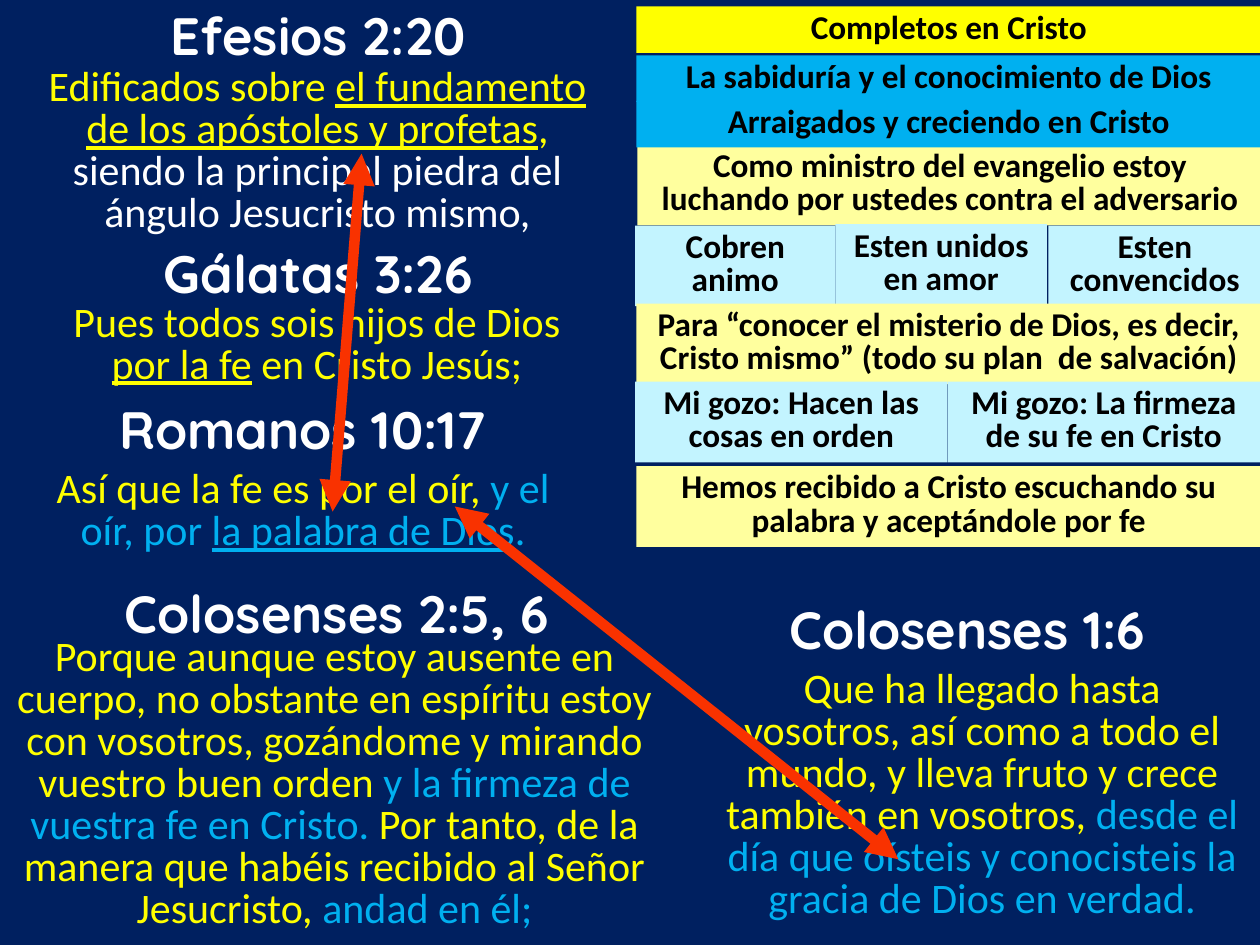
from lxml import etree
from pptx import Presentation
from pptx.dml.color import RGBColor
from pptx.enum.shapes import MSO_CONNECTOR, MSO_SHAPE
from pptx.enum.text import MSO_ANCHOR, MSO_AUTO_SIZE, PP_ALIGN
from pptx.oxml.ns import qn
from pptx.util import Inches, Pt

NAVY = RGBColor(0x00, 0x20, 0x60)
WHITE = RGBColor(0xFF, 0xFF, 0xFF)
BLACK = RGBColor(0x00, 0x00, 0x00)
YELLOW = RGBColor(0xFF, 0xFF, 0x00)
CREAM = RGBColor(0xFF, 0xFF, 0x9E)
BLUE = RGBColor(0x00, 0xB0, 0xF0)
ICE = RGBColor(0xC3, 0xF4, 0xFF)
RED = RGBColor(0xF9, 0x32, 0x00)

BANNERS = [
    ("Completos en Cristo", 5.05, 0.05, 4.96, 0.37, YELLOW),
    ("La sabiduría y el conocimiento de Dios", 5.05, 0.44, 4.96, 0.37, BLUE),
    ("Como ministro del evangelio estoy luchando por ustedes contra el adversario",
     5.06, 1.15, 4.96, 0.64, CREAM),
    ("Cobren animo", 5.04, 1.79, 1.59, 0.64, ICE),
    ("Esten unidos en amor", 6.63, 1.78, 1.68, 0.64, ICE),
    ("Esten convencidos", 8.32, 1.79, 1.69, 0.64, ICE),
    ("Para “conocer el misterio de Dios, es decir, Cristo mismo” (todo su plan  de salvación)",
     5.05, 2.41, 4.96, 0.64, CREAM),
    ("Mi gozo: Hacen las cosas en orden", 5.04, 3.03, 2.48, 0.64, ICE),
    ("Mi gozo: La firmeza de su fe en Cristo", 7.52, 3.03, 2.48, 0.64, ICE),
    ("Arraigados y creciendo en Cristo", 5.05, 0.8, 4.96, 0.37, BLUE),
    ("Hemos recibido a Cristo escuchando su palabra y aceptándole por fe",
     5.05, 3.7, 4.96, 0.64, CREAM),
]

REFERENCES = [
    ("Gálatas 3:26", 0.2, 1.86, 4.65),
    ("Romanos 10:17", 0.08, 3.1, 4.65),
    ("Colosenses 2:5, 6", 0.35, 4.56, 4.65),
    ("Colosenses 1:6", 5.79, 4.69, 3.78),
]

VERSES = [
    ((0.12, 0.49, 4.8, 1.45), [
        ("Edificados sobre ", YELLOW, False),
        ("el fundamento de los apóstoles y profetas", YELLOW, True),
        (", ", YELLOW, False),
        ("siendo la principal piedra del ángulo Jesucristo mismo,", WHITE, False)]),
    ((0.31, 2.36, 4.41, 0.78), [
        ("Pues todos sois hijos de Dios ", YELLOW, False),
        ("por la fe", YELLOW, True),
        (" en Cristo Jesús;", YELLOW, False)]),
    ((0.2, 3.68, 4.41, 0.78), [
        ("Así que la fe es por el oír, ", YELLOW, False),
        ("y el oír, por ", BLUE, False),
        ("la palabra de Dios", BLUE, True),
        (".", BLUE, False)]),
    ((0, 5.01, 5.31, 2.46), [
        ("Porque aunque estoy ausente en cuerpo, no obstante en espíritu estoy con "
         "vosotros, gozándome y mirando vuestro buen orden ", YELLOW, False),
        ("y la firmeza de vuestra fe en Cristo. ", BLUE, False),
        ("Por tanto, de la manera que habéis recibido al Señor Jesucristo, ", YELLOW, False),
        ("andad en él;", BLUE, False)]),
    ((5.63, 5.27, 4.33, 2.13), [
        ("Que ha llegado hasta vosotros, así como a todo el mundo, y lleva fruto y "
         "crece también en vosotros, ", YELLOW, False),
        ("desde el día que oísteis y conocisteis la gracia de Dios en verdad.", BLUE, False)]),
]

ARROWS = [(3.61, 4.02, 7.13, 6.82), (2.87, 1.22, 2.64, 4.06)]


def write_text(frame, runs, *, size, font, bold=False, spacing=None):
    frame.word_wrap = True
    frame.auto_size = MSO_AUTO_SIZE.SHAPE_TO_FIT_TEXT
    frame.vertical_anchor = MSO_ANCHOR.TOP
    paragraph = frame.paragraphs[0]
    paragraph.alignment = PP_ALIGN.CENTER
    if spacing:
        paragraph.line_spacing = Pt(spacing)
    for words, color, underline in runs:
        run = paragraph.add_run()
        run.text = words
        run.font.size = Pt(size)
        run.font.name = font
        run.font.bold = bold
        run.font.underline = underline
        run.font.color.rgb = color


class VerseSlide:
    heading_font = "Quicksand"
    body_font = "Calibri"

    def __init__(self, slide):
        self.slide = slide
        slide.background.fill.solid()
        slide.background.fill.fore_color.rgb = NAVY

    def format_heading(self, heading, words):
        write_text(heading.text_frame, [(words, WHITE, False)],
                   size=30, font=self.heading_font, bold=True)

    def title(self, words, left, top, width):
        title = self.slide.shapes.title
        title.left, title.top = Inches(left), Inches(top)
        title.width, title.height = Inches(width), Inches(0.61)
        self.format_heading(title, words)

    def reference(self, words, left, top, width):
        reference = self.slide.shapes.add_textbox(
            Inches(left), Inches(top), Inches(width), Inches(0.61))
        self.format_heading(reference, words)

    def verse(self, box, runs):
        verse = self.slide.shapes.add_textbox(*map(Inches, box))
        write_text(verse.text_frame, runs, size=24, font=self.body_font, spacing=24)

    def banner(self, words, left, top, width, height, color):
        banner = self.slide.shapes.add_shape(
            MSO_SHAPE.RECTANGLE, Inches(left), Inches(top), Inches(width), Inches(height))
        banner.shadow.inherit = False
        banner.fill.solid()
        banner.fill.fore_color.rgb = color
        banner.line.fill.background()
        write_text(banner.text_frame, [(words, BLACK, False)],
                   size=19, font=self.body_font, bold=True, spacing=19)

    def arrow(self, *ends):
        arrow = self.slide.shapes.add_connector(MSO_CONNECTOR.STRAIGHT, *map(Inches, ends))
        arrow.line.color.rgb = RED
        arrow.line.width = Pt(6)
        outline = arrow.line._get_or_add_ln()
        for tip in ("a:headEnd", "a:tailEnd"):
            etree.SubElement(outline, qn(tip), type="triangle")
        etree.SubElement(arrow._element.spPr, qn("a:effectLst"))


def main():
    deck = Presentation()
    deck.slide_width, deck.slide_height = Inches(10), Inches(7.5)
    page = VerseSlide(deck.slides.add_slide(deck.slide_layouts.get_by_name("Title Only")))
    page.title("Efesios 2:20", 0.2, -0.03, 4.65)
    for reference in REFERENCES:
        page.reference(*reference)
    for verse in VERSES:
        page.verse(*verse)
    for banner in BANNERS:
        page.banner(*banner)
    for arrow in ARROWS:
        page.arrow(*arrow)
    deck.save("out.pptx")


if __name__ == "__main__":
    main()
